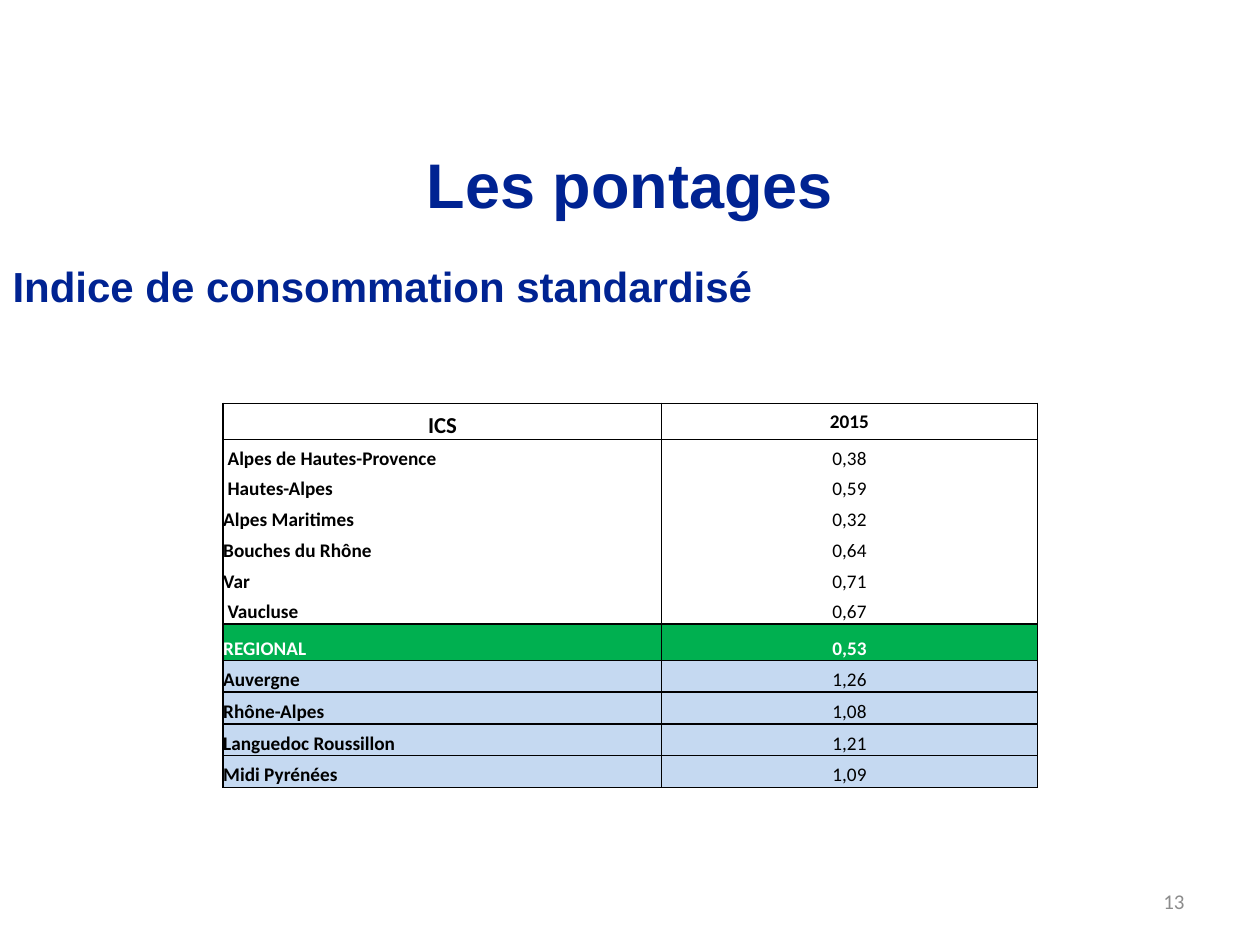
import pptx
import pptx.dml.color
import pptx.enum.text
import pptx.oxml
import pptx.oxml.ns
import pptx.util
from dataclasses import dataclass

Cm = pptx.util.Cm
Pt = pptx.util.Pt
Align = pptx.enum.text.PP_ALIGN
Anchor = pptx.enum.text.MSO_ANCHOR

NAVY, BLACK, WHITE, GREY = "002392", "000000", "FFFFFF", "8C8C8C"
GREEN, PALE_BLUE = "00B050", "C5D9F1"


@dataclass
class RowStyle:
    height: float
    fill: str = ""
    color: str = BLACK
    label_size: int = 11
    label_align: Align = Align.LEFT
    value_bold: bool = False
    value_anchor: Anchor = Anchor.BOTTOM


HEADER = RowStyle(0.73, label_size=13, label_align=Align.CENTER,
                  value_bold=True, value_anchor=Anchor.MIDDLE)
DEPARTMENT = RowStyle(0.62)
REGIONAL = RowStyle(0.73, GREEN, WHITE, value_bold=True)
OTHER_REGION = RowStyle(0.64, PALE_BLUE)

ROWS = [
    ("ICS", "2015", HEADER),
    (" Alpes de Hautes-Provence", "0,38", DEPARTMENT),
    (" Hautes-Alpes", "0,59", DEPARTMENT),
    ("Alpes Maritimes", "0,32", DEPARTMENT),
    ("Bouches du Rhône", "0,64", DEPARTMENT),
    ("Var", "0,71", DEPARTMENT),
    (" Vaucluse", "0,67", DEPARTMENT),
    ("REGIONAL", "0,53", REGIONAL),
    ("Auvergne", "1,26", OTHER_REGION),
    ("Rhône-Alpes", "1,08", OTHER_REGION),
    ("Languedoc Roussillon", "1,21", OTHER_REGION),
    ("Midi Pyrénées", "1,09", OTHER_REGION),
]


def rgb(color: str) -> pptx.dml.color.RGBColor:
    return pptx.dml.color.RGBColor.from_string(color)


def place(shape, left: float, top: float, width: float, height: float) -> None:
    shape.left, shape.top = Cm(left), Cm(top)
    shape.width, shape.height = Cm(width), Cm(height)


def write(paragraph, text: str, size: int, color: str, font: str = "Calibri",
          bold: bool = False, align: Align = Align.LEFT) -> None:
    paragraph.alignment = align
    paragraph.space_before = Pt(0)
    run = paragraph.add_run()
    run.text = text
    run.font.name, run.font.size, run.font.bold = font, Pt(size), bold
    run.font.color.rgb = rgb(color)


def add_borders(cell, top: bool, bottom: bool) -> None:
    properties = cell._tc.get_or_add_tcPr()
    for side, visible in (("L", True), ("R", True), ("T", top), ("B", bottom)):
        paint = (f'<a:solidFill><a:srgbClr val="{BLACK}"/></a:solidFill>'
                 if visible else "<a:noFill/>")
        properties.append(pptx.oxml.parse_xml(
            f'<a:ln{side} {pptx.oxml.ns.nsdecls("a")} w="{Pt(1)}">{paint}</a:ln{side}>'))


def fill_cell(cell, text: str, style: RowStyle, is_label: bool,
              top: bool, bottom: bool) -> None:
    cell.margin_left = cell.margin_right = cell.margin_top = cell.margin_bottom = 0
    cell.vertical_anchor = Anchor.BOTTOM if is_label else style.value_anchor
    add_borders(cell, top, bottom)
    if style.fill:
        cell.fill.solid()
        cell.fill.fore_color.rgb = rgb(style.fill)
    else:
        cell.fill.background()
    write(cell.text_frame.paragraphs[0], text,
          style.label_size if is_label else 11, style.color,
          bold=is_label or style.value_bold,
          align=style.label_align if is_label else Align.CENTER)


def add_index_table(slide) -> None:
    widths = (8.84, 7.57)
    total_height = sum(style.height for _, _, style in ROWS)
    table = slide.shapes.add_table(len(ROWS), len(widths), Cm(4.5), Cm(8.13),
                                   Cm(sum(widths)), Cm(total_height)).table
    table.first_row = table.horz_banding = False
    for column, width in zip(table.columns, widths):
        column.width = Cm(width)
    styles = [style for _, _, style in ROWS]
    for index, (label, value, style) in enumerate(ROWS):
        table.rows[index].height = Cm(style.height)
        # Departments form one block without inner rules
        top = style is not DEPARTMENT or styles[index - 1] is not DEPARTMENT
        bottom = style is not DEPARTMENT or styles[index + 1] is not DEPARTMENT
        fill_cell(table.cell(index, 0), label, style, True, top, bottom)
        fill_cell(table.cell(index, 1), value, style, False, top, bottom)


def main() -> None:
    presentation = pptx.Presentation()
    presentation.slide_width, presentation.slide_height = Cm(25.4), Cm(19.05)
    slide = presentation.slides.add_slide(presentation.slide_layouts[1])

    # Title
    title = slide.shapes.title
    place(title, 1.27, 2.51, 22.86, 2.39)
    title.text_frame.vertical_anchor = Anchor.MIDDLE
    write(title.text_frame.paragraphs[0], "Les pontages", 36, NAVY, "Arial",
          True, Align.CENTER)

    # Subtitle, unbulleted second-level text
    body = slide.placeholders[1]
    place(body, 0, 5.13, 25.4, 11.2)
    paragraph = body.text_frame.paragraphs[0]
    paragraph.level = 1
    write(paragraph, "Indice de consommation standardisé", 24, NAVY, "Arial", True)
    properties = paragraph._p.get_or_add_pPr()
    properties.set("marL", "0")
    properties.set("indent", "0")
    properties.append(pptx.oxml.parse_xml(
        f'<a:buNone {pptx.oxml.ns.nsdecls("a")}/>'))

    # Slide number
    number = slide.shapes.add_textbox(Cm(18.21), Cm(17.65), Cm(5.92), Cm(1.02))
    number.text_frame.word_wrap = True
    number.text_frame.vertical_anchor = Anchor.MIDDLE
    write(number.text_frame.paragraphs[0], "13", 12, GREY, align=Align.RIGHT)

    add_index_table(slide)
    presentation.save("out.pptx")


if __name__ == "__main__":
    main()
